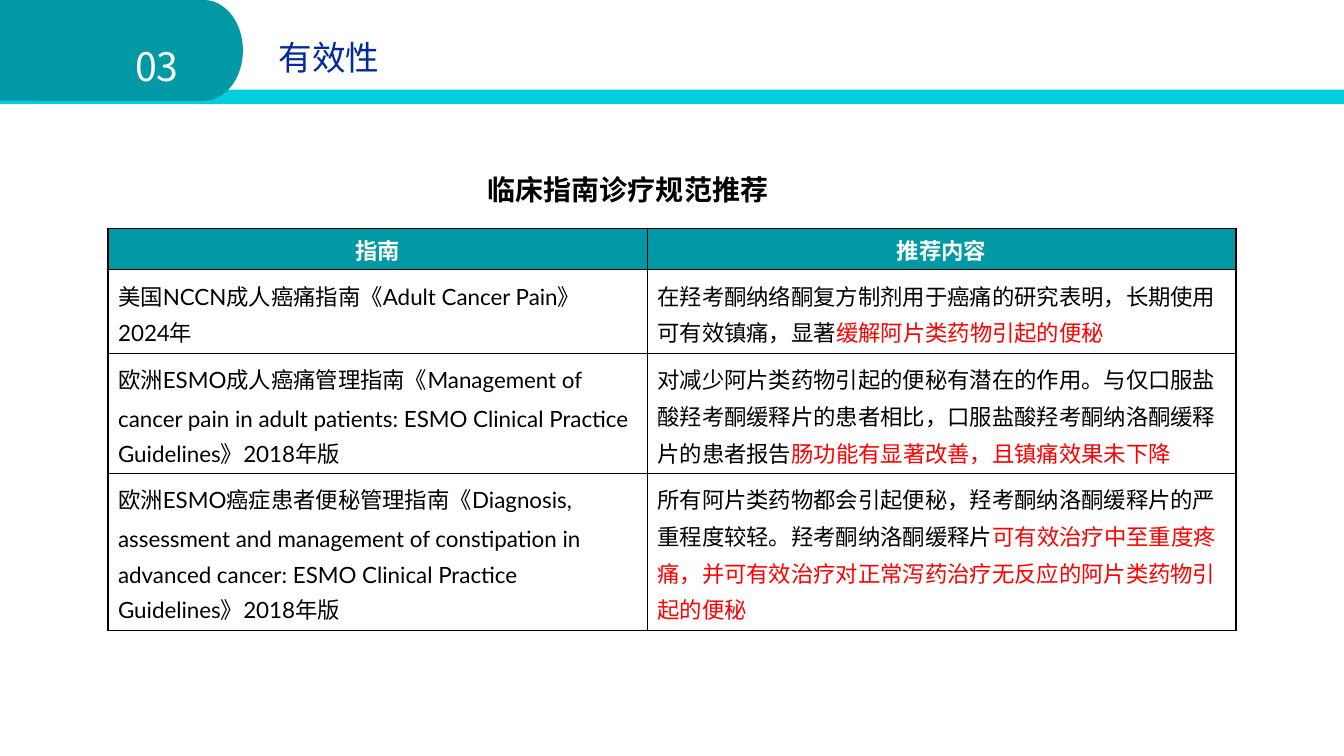
"""Build the slide on guideline recommendations for clinical effectiveness."""
from dataclasses import dataclass

from lxml import etree
from pptx import Presentation
from pptx.dml.color import RGBColor
from pptx.enum.shapes import MSO_SHAPE
from pptx.enum.text import MSO_ANCHOR, MSO_AUTO_SIZE, PP_ALIGN
from pptx.oxml.ns import qn
from pptx.util import Pt

RECTANGLE = MSO_SHAPE.RECTANGLE
TERMINATOR = MSO_SHAPE.FLOWCHART_TERMINATOR
CENTER, JUSTIFY, LEFT = PP_ALIGN.CENTER, PP_ALIGN.JUSTIFY, PP_ALIGN.LEFT
MIDDLE, TOP = MSO_ANCHOR.MIDDLE, MSO_ANCHOR.TOP
GROW, FIXED = MSO_AUTO_SIZE.SHAPE_TO_FIT_TEXT, MSO_AUTO_SIZE.NONE


@dataclass(frozen=True)
class Theme:
    teal: str = "0099A5"
    cyan: str = "00CDDD"
    navy: str = "002999"
    white: str = "FFFFFF"
    black: str = "000000"
    red: str = "FF0000"
    chinese: str = "Noto Sans CJK SC"
    latin: str = "Lato"
    number_size: int = 28
    title_size: int = 24
    caption_size: int = 20
    table_size: int = 16


theme = Theme()


def write(paragraph, pieces, size, align, font=theme.chinese, bold=False, spacing=None):
    """Fill a paragraph with (text, colour) pieces."""
    paragraph.alignment = align
    paragraph.line_spacing = spacing
    for text, color in pieces:
        run = paragraph.add_run()
        run.text = text
        run.font.size = Pt(size)
        run.font.bold = bold
        run.font.color.rgb = RGBColor.from_string(color)
        run.font.name = font
        east_asian = etree.SubElement(run.font._element, qn("a:ea"))
        east_asian.set("typeface", theme.chinese)


presentation = Presentation()
presentation.slide_width, presentation.slide_height = Pt(960), Pt(540)
slide = presentation.slides.add_slide(presentation.slide_layouts[6])

for kind, top, width, height, color in [
    (RECTANGLE, 64.1, 960, 10.1, theme.cyan),
    (TERMINATOR, 0, 173.5, 72, theme.teal),
    (RECTANGLE, 0, 80.6, 72, theme.teal),
]:
    band = slide.shapes.add_shape(kind, 0, Pt(top), Pt(width), Pt(height))
    band.shadow.inherit = False
    band.fill.solid()
    band.fill.fore_color.rgb = RGBColor.from_string(color)
    band.line.fill.background()

labels = [
    ("03", theme.white, (96.5, 30.2, 41.8, 45.4),
     theme.number_size, JUSTIFY, False, None, FIXED, 0),
    ("有效性", theme.navy, (138.2, 26.6, 193.7, 53.3),
     theme.title_size, CENTER, False, None, FIXED, 0),
    ("临床指南诊疗规范推荐", theme.black, (341.3, 108, 234, 39.6),
     theme.caption_size, JUSTIFY, True, 1.5, GROW, None),
]
for text, color, place, size, align, bold, spacing, fit, inset in labels:
    frame = slide.shapes.add_textbox(*map(Pt, place)).text_frame
    frame.word_wrap = True
    frame.auto_size = fit
    if inset is not None:
        frame.margin_left = frame.margin_right = Pt(inset)
        frame.margin_top = frame.margin_bottom = Pt(inset)
    write(frame.paragraphs[0], [(text, color)], size, align, bold=bold, spacing=spacing)

guidelines = [
    (["指南"], [("推荐内容", theme.white)]),
    (["美国NCCN成人癌痛指南《Adult Cancer Pain》", "2024年"],
     [("在羟考酮纳络酮复方制剂用于癌痛的研究表明，长期使用可有效镇痛，显著", theme.black),
      ("缓解阿片类药物引起的便秘", theme.red)]),
    (["欧洲ESMO成人癌痛管理指南《Management of cancer pain in adult patients: "
      "ESMO Clinical Practice Guidelines》2018年版"],
     [("对减少阿片类药物引起的便秘有潜在的作用。与仅口服盐酸羟考酮缓释片的患者相比，"
       "口服盐酸羟考酮纳洛酮缓释片的患者报告", theme.black),
      ("肠功能有显著改善，且镇痛效果未下降", theme.red)]),
    (["欧洲ESMO癌症患者便秘管理指南《Diagnosis, assessment and management of constipation "
      "in advanced cancer: ESMO Clinical Practice Guidelines》2018年版"],
     [("所有阿片类药物都会引起便秘，羟考酮纳洛酮缓释片的严重程度较轻。羟考酮纳洛酮缓释片",
       theme.black),
      ("可有效治疗中至重度疼痛，并可有效治疗对正常泻药治疗无反应的阿片类药物引起的便秘",
       theme.red)]),
]
column_widths = [385.2, 420.5]
row_heights = [29.5, 59.8, 72, 108.7]
table = slide.shapes.add_table(
    len(row_heights), len(column_widths), Pt(77.2), Pt(163.1),
    Pt(sum(column_widths)), Pt(sum(row_heights))).table
for column, width in zip(table.columns, column_widths):
    column.width = Pt(width)

for row_index, (names, advice) in enumerate(guidelines):
    table.rows[row_index].height = Pt(row_heights[row_index])
    header = row_index == 0
    ink = theme.white if header else theme.black
    name_lines = [[(name, ink)] for name in names]
    for column_index, lines in enumerate([name_lines, [advice]]):
        cell = table.cell(row_index, column_index)
        cell.vertical_anchor = TOP if header else MIDDLE
        for line_index, pieces in enumerate(lines):
            frame = cell.text_frame
            paragraph = frame.add_paragraph() if line_index else frame.paragraphs[0]
            write(paragraph, pieces, theme.table_size, CENTER if header else LEFT,
                  theme.latin, header, None if header else Pt(26.2))
        properties = cell._tc.get_or_add_tcPr()
        for side in ("lnL", "lnR", "lnT", "lnB"):
            border = etree.SubElement(properties, qn(f"a:{side}"), w=str(Pt(1)))
            paint = etree.SubElement(border, qn("a:solidFill"))
            etree.SubElement(paint, qn("a:srgbClr"), val=theme.black)
        cell.fill.solid()
        cell.fill.fore_color.rgb = RGBColor.from_string(theme.teal if header else theme.white)

presentation.save("out.pptx")
